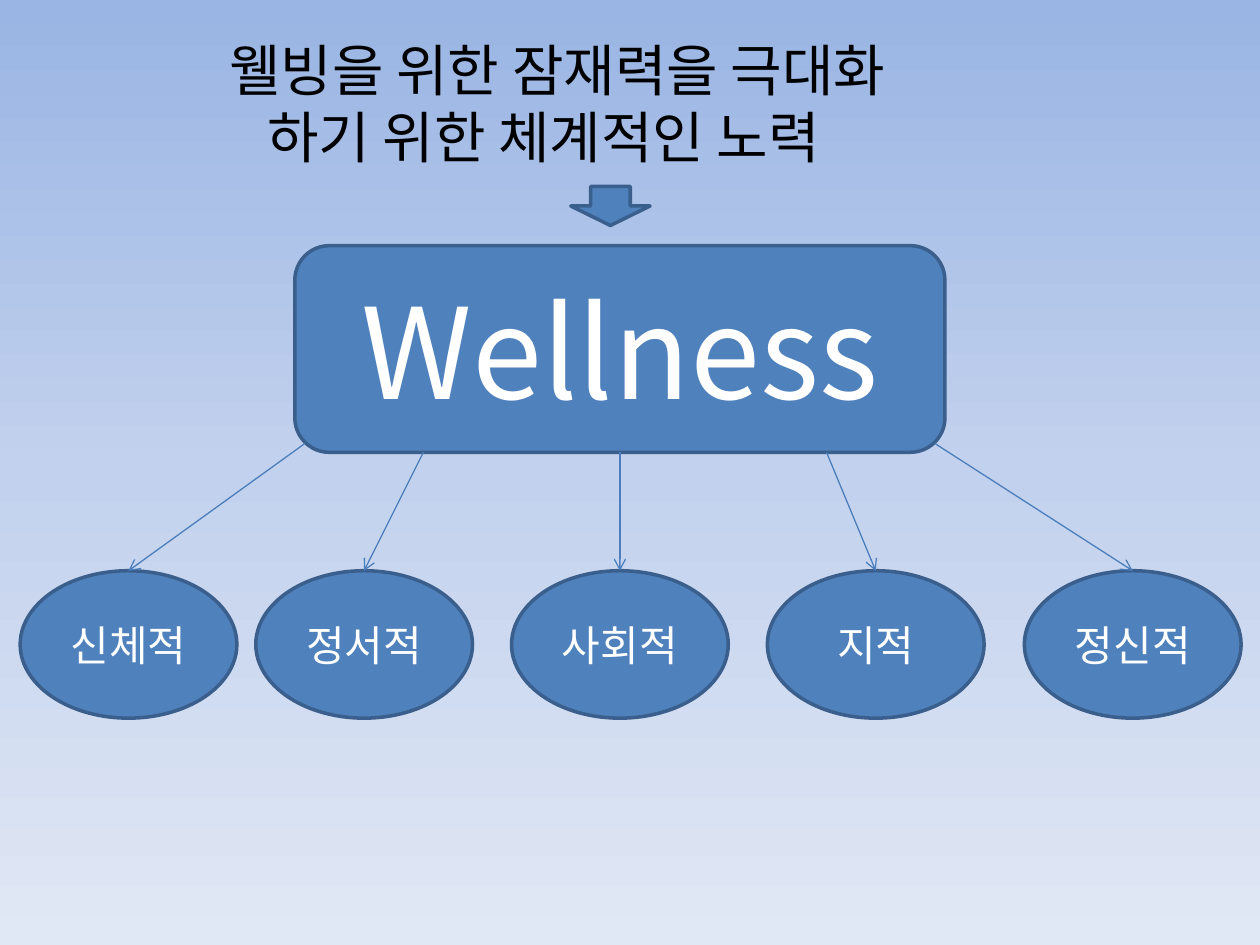
from copy import deepcopy

from lxml.etree import SubElement
from pptx import Presentation
from pptx.dml.color import RGBColor
from pptx.enum.shapes import MSO_CONNECTOR, MSO_SHAPE
from pptx.enum.text import MSO_ANCHOR, MSO_AUTO_SIZE, PP_ALIGN
from pptx.oxml.ns import qn
from pptx.util import Inches, Pt

FONT = "Noto Sans CJK KR"
BLUE = RGBColor(0x4F, 0x81, 0xBD)
OUTLINE = RGBColor(0x3A, 0x5F, 0x8C)
ARROW = RGBColor(0x4B, 0x7E, 0xBC)
WHITE = RGBColor(0xFF, 0xFF, 0xFF)
BLACK = RGBColor(0x00, 0x00, 0x00)
SKY = (RGBColor(0x9A, 0xB5, 0xE4), RGBColor(0xC2, 0xD1, 0xED), RGBColor(0xE1, 0xE8, 0xF5))

BOX_BOTTOM = 3.59
CORNER_Y = 3.52
OVAL_TOP, OVAL_WIDTH, OVAL_HEIGHT = 4.53, 1.72, 1.17
# Dimension, left edge of its oval, start of its arrow (None: middle of the box)
DIMENSIONS = [
    ("신체적", 0.16, (2.42, CORNER_Y)),
    ("정서적", 2.03, (3.36, BOX_BOTTOM)),
    ("사회적", 4.06, None),
    ("지적", 6.09, (6.56, BOX_BOTTOM)),
    ("정신적", 8.13, (7.42, CORNER_Y)),
]


def paint_background(slide):
    fill = slide.background.fill
    fill.gradient()
    fill.gradient_angle = 270  # counter-clockwise: top to bottom
    last_stop = fill.gradient_stops[1]._gs
    last_stop.addnext(deepcopy(last_stop))
    for stop, position, color in zip(fill.gradient_stops, (0, 0.5, 1), SKY):
        stop.position = position
        stop.color.rgb = color


def style_paragraph(paragraph, size, color):
    font = paragraph.font
    font.size = Pt(size)
    font.color.rgb = color
    font.name = FONT
    # Hangul takes the East Asian typeface
    SubElement(font._element, qn("a:ea")).set("typeface", FONT)


def add_heading(slide, lines):
    heading = slide.shapes.title
    heading.left, heading.top = Inches(1.72), Inches(0.23)
    heading.width, heading.height = Inches(6.25), Inches(1.18)
    frame = heading.text_frame
    frame.text = "\n".join(lines)
    frame.word_wrap = True
    frame.auto_size = MSO_AUTO_SIZE.SHAPE_TO_FIT_TEXT
    frame.vertical_anchor = MSO_ANCHOR.TOP
    for paragraph in frame.paragraphs:
        paragraph.alignment = PP_ALIGN.LEFT
        style_paragraph(paragraph, 32, BLACK)
    # The second line is set in a little
    frame.paragraphs[1]._p.get_or_add_pPr().set("marL", str(Inches(0.3)))


def add_block(slide, kind, left, top, width, height, text="", size=24):
    block = slide.shapes.add_shape(
        kind, Inches(left), Inches(top), Inches(width), Inches(height))
    block.shadow.inherit = False
    block.fill.solid()
    block.fill.fore_color.rgb = BLUE
    block.line.color.rgb = OUTLINE
    block.line.width = Pt(2)
    if text:
        frame = block.text_frame
        frame.text = text
        frame.vertical_anchor = MSO_ANCHOR.MIDDLE
        frame.paragraphs[0].alignment = PP_ALIGN.CENTER
        style_paragraph(frame.paragraphs[0], size, WHITE)
    return block


def add_arrow(slide, box, oval, start):
    x, y = start or (0, 0)
    arrow = slide.shapes.add_connector(
        MSO_CONNECTOR.STRAIGHT, Inches(x), Inches(y), Inches(x), Inches(y))
    if start is None:
        arrow.begin_connect(box, 2)
    arrow.end_connect(oval, 0)
    arrow.line.color.rgb = ARROW
    arrow.line.width = Pt(0.75)
    SubElement(arrow.line._get_or_add_ln(), qn("a:tailEnd")).set("type", "arrow")
    SubElement(arrow._element.spPr, qn("a:effectLst"))


def main():
    prs = Presentation()
    prs.slide_width, prs.slide_height = Inches(10), Inches(7.5)
    slide = prs.slides.add_slide(prs.slide_layouts[5])
    paint_background(slide)

    # Definition leading down to the central idea
    add_heading(slide, ["웰빙을 위한 잠재력을 극대화", "하기 위한 체계적인 노력"])
    wellness = add_block(slide, MSO_SHAPE.ROUNDED_RECTANGLE,
                         2.34, 1.95, 5.16, 1.64, "Wellness", 72)
    add_block(slide, MSO_SHAPE.DOWN_ARROW, 4.53, 1.48, 0.63, 0.31)

    # Five dimensions of wellness
    for name, left, start in DIMENSIONS:
        oval = add_block(slide, MSO_SHAPE.OVAL, left, OVAL_TOP,
                         OVAL_WIDTH, OVAL_HEIGHT, name)
        add_arrow(slide, wellness, oval, start)

    prs.save("out.pptx")


if __name__ == "__main__":
    main()
